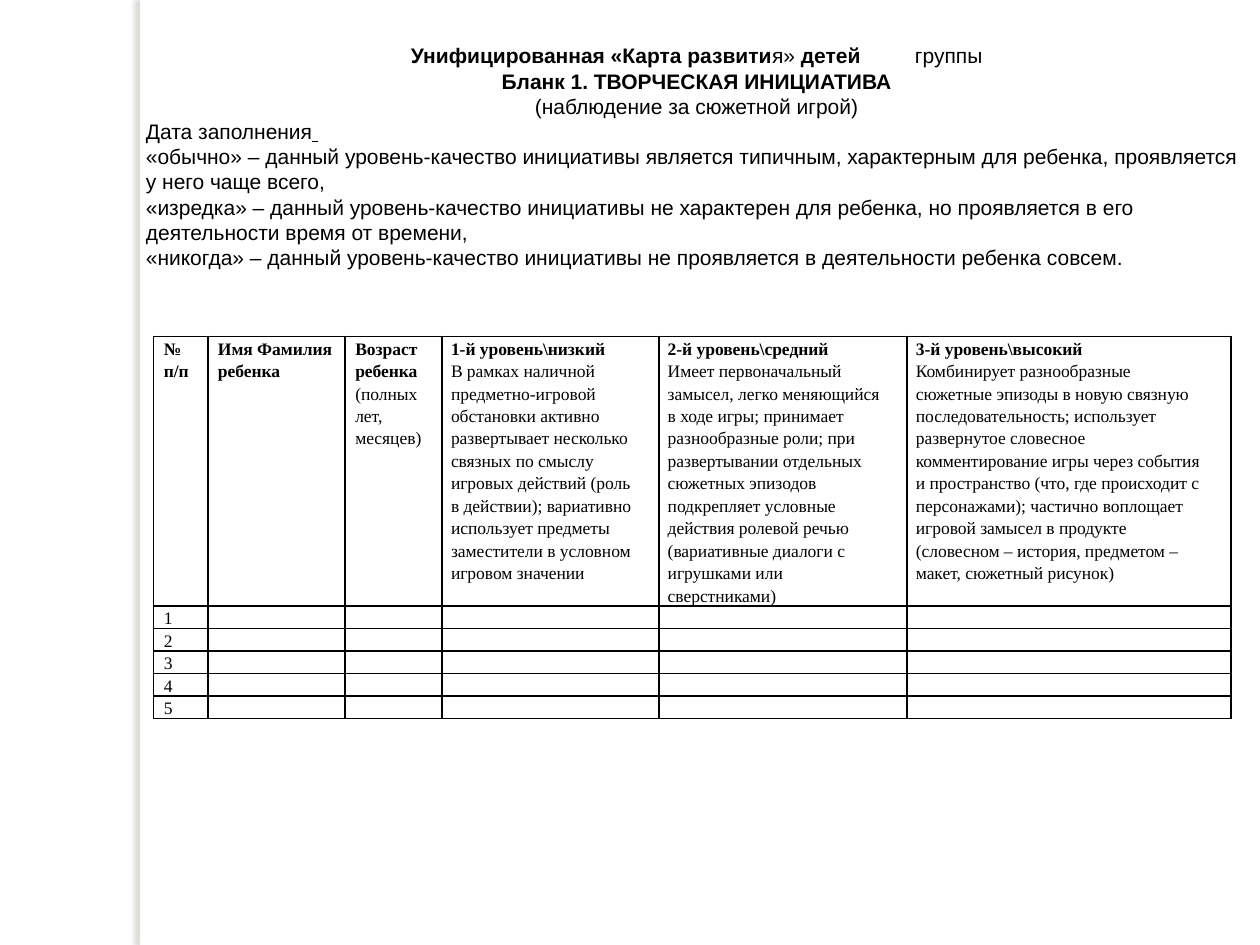
from dataclasses import dataclass
from lxml.etree import SubElement
from pptx import Presentation
from pptx.dml.color import RGBColor
from pptx.enum.shapes import MSO_SHAPE
from pptx.enum.text import MSO_ANCHOR, PP_ALIGN
from pptx.oxml import parse_xml
from pptx.oxml.ns import qn
from pptx.util import Emu, Inches, Pt

HUES = {"ink": "000000", "paper": "FFFFFF", "shade": "736F63"}
SPACE = "http://schemas.openxmlformats.org/drawingml/2006/main"
PLAIN = "{2D5ABB26-0587-4C30-8999-92F81FD0307C}"


@dataclass
class Span:
    text: str
    bold: bool = False
    under: bool = False


@dataclass
class Line:
    spans: list[Span]
    mid: bool = False


@dataclass
class Column:
    width: float
    pad: float
    bold: int
    lines: list[str]


NOTES = [
    Line([Span("Унифицированная «Карта развити", True), Span("я» "),
          Span("детей", True), Span("\t", True, True), Span("группы")], True),
    Line([Span("Бланк 1. ТВОРЧЕСКАЯ ИНИЦИАТИВА", True)], True),
    Line([Span("(наблюдение за сюжетной игрой)")], True),
    Line([Span("Дата заполнения"), Span(" \t", under=True)]),
    Line([Span("«обычно» – данный уровень-качество инициативы является типичным, "
               "характерным для ребенка, проявляется у него чаще всего,")]),
    Line([Span("«изредка» – данный уровень-качество инициативы не характерен для "
               "ребенка, но проявляется в его деятельности время от времени,")]),
    Line([Span("«никогда» – данный уровень-качество инициативы не проявляется "
               "в деятельности ребенка совсем.")]),
]
COLUMNS = [
    Column(0.43, 0.08, 2, ["№", "п/п"]),
    Column(1.09, 0.08, 2, ["Имя Фамилия", "ребенка"]),
    Column(0.77, 0.08, 2, ["Возраст", "ребенка", "(полных", "лет,", "месяцев)"]),
    Column(1.72, 0.07, 1, [
        "1-й уровень\\низкий", "В рамках наличной", "предметно-игровой",
        "обстановки активно", "развертывает несколько", "связных по смыслу",
        "игровых действий (роль", "в действии); вариативно", "использует предметы",
        "заместители в условном", "игровом значении"]),
    Column(1.97, 0.07, 1, [
        "2-й уровень\\средний", "Имеет первоначальный", "замысел, легко меняющийся",
        "в ходе игры; принимает", "разнообразные роли; при", "развертывании отдельных",
        "сюжетных эпизодов", "подкрепляет условные", "действия ролевой речью",
        "(вариативные диалоги с", "игрушками или", "сверстниками)"]),
    Column(2.57, 0.07, 1, [
        "3-й уровень\\высокий", "Комбинирует разнообразные",
        "сюжетные эпизоды в новую связную", "последовательность; использует",
        "развернутое словесное", "комментирование игры через события",
        "и пространство (что, где происходит с", "персонажами); частично воплощает",
        "игровой замысел в продукте", "(словесном – история, предметом –",
        "макет, сюжетный рисунок)"]),
]
HEAD = max(len(col.lines) for col in COLUMNS)
KIDS = 5


def write(para, text: str, *, font: str, size: float, bold: bool = False,
          under: bool = False) -> None:
    run = para.add_run()
    run.text = text
    run.font.name = font
    run.font.size = Pt(size)
    run.font.bold = bold
    run.font.underline = under
    run.font.color.rgb = RGBColor.from_string(HUES["ink"])


def edge(cell, sides: str) -> None:
    props = cell._tc.get_or_add_tcPr()
    for spot, side in enumerate(sides):
        props.insert(spot, parse_xml(
            f'<a:ln{side} xmlns:a="{SPACE}" w="{Pt(1)}"><a:solidFill>'
            f'<a:srgbClr val="{HUES["ink"]}"/></a:solidFill></a:ln{side}>'))


def sides(row: int) -> str:
    if row >= HEAD:
        return "LRTB"
    return "LR" + ("T" if row == 0 else "B" if row == HEAD - 1 else "")


def strip(slide) -> None:
    bar = slide.shapes.add_shape(MSO_SHAPE.RECTANGLE, Inches(1.11), Inches(0),
                                 Inches(0.08), Inches(7.5))
    bar.fill.solid()
    bar.fill.fore_color.rgb = RGBColor.from_string(HUES["paper"])
    bar.line.fill.background()
    bar.shadow.inherit = False
    glow = SubElement(bar._element.spPr.find(qn("a:effectLst")), qn("a:outerShdw"),
                      blurRad=str(Pt(3)), dist=str(Pt(3)), dir="10800000",
                      rotWithShape="0")
    tone = SubElement(glow, qn("a:srgbClr"), val=HUES["shade"])
    SubElement(tone, qn("a:alpha"), val="25000")


def grid(slide) -> None:
    count = HEAD + KIDS
    table = slide.shapes.add_table(
        count, len(COLUMNS), Inches(1.22), Inches(2.67),
        Inches(sum(col.width for col in COLUMNS)), Inches(0.16 * count)).table
    table.first_row = table.horz_banding = False
    table._tbl.tblPr.find(qn("a:tableStyleId")).text = PLAIN
    for row in table.rows:
        row.height = Inches(0.16)
    for x, col in enumerate(COLUMNS):
        table.columns[x].width = Inches(col.width)
        for y in range(count):
            cell = table.cell(y, x)
            cell.fill.background()
            cell.margin_left = cell.margin_right = Emu(0)
            cell.margin_top = cell.margin_bottom = Emu(0)
            para = cell.text_frame.paragraphs[0]
            para.line_spacing = Pt(12.8)
            para._p.get_or_add_pPr().set("marL", str(Inches(col.pad)))
            text = col.lines[y] if y < len(col.lines) else ""
            if x == 0 and y >= HEAD:
                text = str(y - HEAD + 1)
            if text:
                write(para, text, font="Times New Roman", size=10, bold=y < col.bold)
            else:
                SubElement(para._p, qn("a:endParaRPr"), sz="1000")
            edge(cell, sides(y))


def intro(slide) -> None:
    frame = slide.shapes.add_textbox(Inches(1.06), Inches(0.28), Inches(8.94),
                                     Inches(1.92)).text_frame
    frame.word_wrap = True
    frame.vertical_anchor = MSO_ANCHOR.MIDDLE
    for spot, line in enumerate(NOTES):
        para = frame.add_paragraph() if spot else frame.paragraphs[0]
        para.alignment = PP_ALIGN.CENTER if line.mid else PP_ALIGN.LEFT
        tabs = SubElement(para._p.get_or_add_pPr(), qn("a:tabLst"))
        SubElement(tabs, qn("a:tab"), pos=str(Inches(2.89)), algn="l")
        for span in line.spans:
            write(para, span.text, font="Arial", size=12, bold=span.bold,
                  under=span.under)


def main() -> None:
    deck = Presentation()
    deck.slide_width, deck.slide_height = Inches(10), Inches(7.5)
    slide = deck.slides.add_slide(deck.slide_layouts[6])
    strip(slide)
    grid(slide)
    intro(slide)
    deck.save("out.pptx")


if __name__ == "__main__":
    main()
